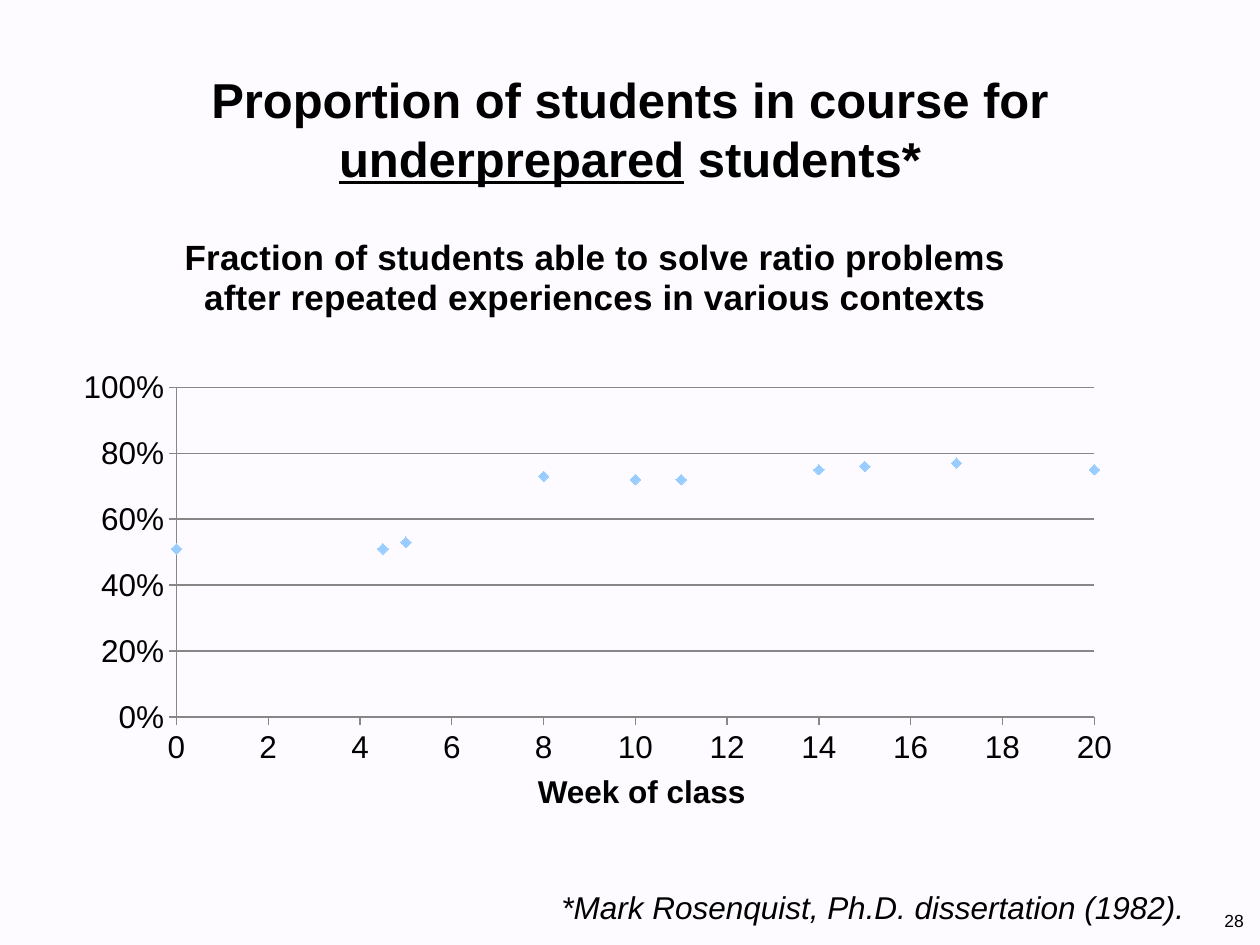
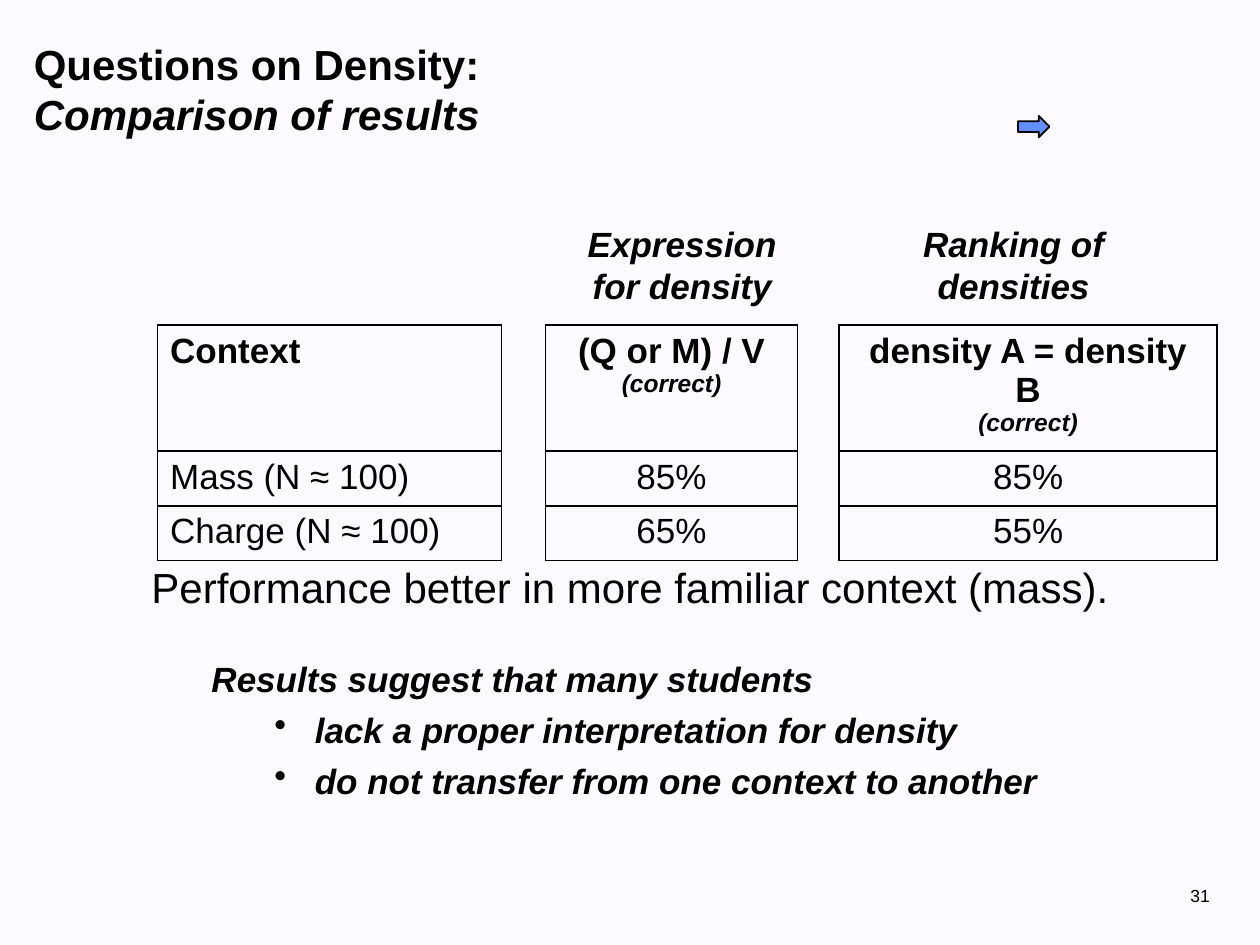
import lxml.etree
import pptx
import pptx.chart.data
import pptx.dml.color
import pptx.enum.chart
import pptx.enum.shapes
import pptx.enum.text
import pptx.oxml
import pptx.oxml.ns
import pptx.util

Inches, Pt = pptx.util.Inches, pptx.util.Pt
qn = pptx.oxml.ns.qn
ALIGN = pptx.enum.text.PP_ALIGN
ANCHOR = pptx.enum.text.MSO_ANCHOR

FONT = "Arial"
COLORS = {"paper": "FDFBFF", "ink": "000000", "grid": "878787",
          "points": "99CCFF", "arrow": "618FFD"}

WEEKS = [0, 4.5, 5, 8, 10, 11, 14, 15, 17, 20]
FRACTIONS = [0.51, 0.51, 0.53, 0.73, 0.72, 0.72, 0.75, 0.76, 0.77, 0.75]

# An empty string marks a gap column between the blocks of the table
RESULTS = [
    ["Context", "", "(Q or M) / V\n(correct)", "", "density A = density B\n(correct)"],
    ["Mass (N ≈ 100)", "", "85%", "", "85%"],
    ["Charge (N ≈ 100)", "", "65%", "", "55%"],
]
COLUMN_WIDTHS = [2.73, 0.35, 2, 0.33, 3]
ROW_HEIGHTS = [0.94, 0.41, 0.41]


def color(name):
    return pptx.dml.color.RGBColor.from_string(COLORS[name])


def style_font(font, size, bold=False, italic=False):
    font.name, font.size = FONT, Pt(size)
    font.bold, font.italic = bold, italic
    font.color.rgb = color("ink")


def add_text(slide, box, lines, size, bold=False, italic=False,
             align=ALIGN.LEFT, anchor=ANCHOR.TOP, wrap=True):
    """Each line is a list of run texts; returns the paragraphs."""
    frame = slide.shapes.add_textbox(*map(Inches, box)).text_frame
    frame.word_wrap = wrap
    frame.vertical_anchor = anchor
    for index, runs in enumerate(lines):
        paragraph = frame.paragraphs[0] if index == 0 else frame.add_paragraph()
        paragraph.alignment = align
        for text in runs:
            run = paragraph.add_run()
            run.text = text
            style_font(run.font, size, bold, italic)
    return frame.paragraphs


def new_slide(deck):
    slide = deck.slides.add_slide(deck.slide_layouts[6])
    slide.background.fill.solid()
    slide.background.fill.fore_color.rgb = color("paper")
    return slide


def add_title(slide, box, lines, size, align):
    return add_text(slide, box, lines, size, bold=True, align=align,
                    anchor=ANCHOR.MIDDLE)


def add_page_number(slide, box, number):
    add_text(slide, box, [[number]], 10, align=ALIGN.RIGHT,
             anchor=ANCHOR.BOTTOM, wrap=False)


def set_layout(element, **fractions):
    """Pin a chart part to fractions (x, y, w, h) of the chart area."""
    for old in element.findall(qn("c:layout")):
        element.remove(old)
    layout = lxml.etree.Element(qn("c:layout"))
    manual = lxml.etree.SubElement(layout, qn("c:manualLayout"))
    settings = {"xMode": "edge", "yMode": "edge", **fractions}
    if "w" in fractions:
        settings = {"layoutTarget": "inner", **settings}
    for tag, value in settings.items():
        lxml.etree.SubElement(manual, qn("c:" + tag)).set("val", str(value))
    text = element.find(qn("c:tx"))
    if text is None:
        element.insert(0, layout)
    else:
        text.addnext(layout)


def style_axis(axis, maximum, step, number_format):
    axis.minimum_scale, axis.maximum_scale = 0, maximum
    axis.major_unit = step
    axis.major_tick_mark = pptx.enum.chart.XL_TICK_MARK.OUTSIDE
    axis.minor_tick_mark = pptx.enum.chart.XL_TICK_MARK.NONE
    axis.tick_labels.number_format = number_format
    axis.tick_labels.number_format_is_linked = False
    style_font(axis.tick_labels.font, 18)
    axis.format.line.color.rgb = color("grid")
    axis.format.line.width = Pt(0.75)


def add_ratio_chart(slide, box):
    data = pptx.chart.data.XyChartData()
    points = data.add_series("Series 1")
    for week, fraction in zip(WEEKS, FRACTIONS):
        points.add_data_point(week, fraction)
    chart = slide.shapes.add_chart(
        pptx.enum.chart.XL_CHART_TYPE.XY_SCATTER, *map(Inches, box), data).chart
    style_font(chart.font, 18)
    chart.has_legend = False

    # Chart title
    chart.has_title = True
    heading = chart.chart_title.text_frame
    heading.text = ("Fraction of students able to solve ratio problems\n"
                    "after repeated experiences in various contexts")
    for paragraph in heading.paragraphs:
        style_font(paragraph.runs[0].font, 20, bold=True)
    set_layout(chart.chart_title._element, x=0.11, y=0.04)

    # Axes and plot area
    style_axis(chart.category_axis, 20, 2, "General")
    style_axis(chart.value_axis, 1, 0.2, "0%")
    chart.category_axis.has_major_gridlines = False
    chart.value_axis.has_major_gridlines = True
    gridlines = chart.value_axis.major_gridlines.format.line
    gridlines.color.rgb = color("grid")
    gridlines.width = Pt(0.75)
    set_layout(chart._chartSpace.chart.plotArea, x=0.106, y=0.312, w=0.857, h=0.582)

    # Points without a joining line
    plot = chart.plots[0]
    plot.vary_by_categories = False
    series = plot.series[0]
    series.smooth = False
    series.format.line.fill.background()
    series.marker.style = pptx.enum.chart.XL_MARKER_STYLE.DIAMOND
    series.marker.size = 6
    series.marker.format.fill.solid()
    series.marker.format.fill.fore_color.rgb = color("points")
    series.marker.format.line.color.rgb = color("points")


def set_cell_borders(cell, is_gap):
    properties = cell._tc.get_or_add_tcPr()
    for index, side in enumerate(("lnL", "lnR", "lnT", "lnB")):
        line = lxml.etree.Element(qn("a:" + side), w=str(Pt(1)))
        if is_gap and side in ("lnT", "lnB"):
            lxml.etree.SubElement(line, qn("a:noFill"))
        else:
            fill = lxml.etree.SubElement(line, qn("a:solidFill"))
            lxml.etree.SubElement(fill, qn("a:srgbClr")).set("val", COLORS["ink"])
        properties.insert(index, line)


def add_results_table(slide, box):
    table = slide.shapes.add_table(
        len(RESULTS), len(COLUMN_WIDTHS), *map(Inches, box)).table
    table.first_row = table.horz_banding = False
    for column, width in zip(table.columns, COLUMN_WIDTHS):
        column.width = Inches(width)
    for row, height in zip(table.rows, ROW_HEIGHTS):
        row.height = Inches(height)

    for r, texts in enumerate(RESULTS):
        for c, text in enumerate(texts):
            cell = table.cell(r, c)
            cell.text_frame.text = text
            cell.fill.background()
            set_cell_borders(cell, is_gap=not text)
            for paragraph in cell.text_frame.paragraphs:
                paragraph.alignment = ALIGN.CENTER if c else ALIGN.LEFT
                is_note = paragraph.text == "(correct)"
                for run in paragraph.runs:
                    style_font(run.font, 14 if is_note else 20,
                               bold=r == 0, italic=is_note)


def add_column_headings(slide, box):
    left, top, width, height = box
    for offset, share, heading in ((0, 1.83, "Expression for density"),
                                   (2.67, width - 2.67, "Ranking of densities")):
        add_text(slide, (left + offset, top, share, height), [[heading]], 20,
                 bold=True, italic=True, align=ALIGN.CENTER)


def add_conclusions(slide, box):
    lines = [["Results suggest that many students"],
             ["lack a proper interpretation for density"],
             ["do not transfer from one context to another"]]
    paragraphs = add_text(slide, box, lines, 20, bold=True, italic=True)
    for paragraph in paragraphs[1:]:
        paragraph.space_before = Pt(5)
        properties = paragraph._p.get_or_add_pPr()
        properties.set("marL", str(Inches(0.82)))
        properties.set("indent", str(Inches(-0.32)))
        lxml.etree.SubElement(properties, qn("a:buChar")).set("char", "•")


def add_arrow(slide, box):
    arrow = slide.shapes.add_shape(
        pptx.enum.shapes.MSO_SHAPE.RIGHT_ARROW, *map(Inches, box))
    arrow.shadow.inherit = False
    arrow.fill.solid()
    arrow.fill.fore_color.rgb = color("arrow")
    arrow.line.color.rgb = color("ink")
    arrow.line.width = Pt(1)


def build_proportion_slide(deck):
    slide = new_slide(deck)
    title = add_title(slide, (0.75, 0.5, 8.5, 1.04),
                      [["Proportion of students in course for ",
                        "underprepared", " students*"]], 28, ALIGN.CENTER)
    title[0].runs[1].font.underline = True
    add_ratio_chart(slide, (0.5, 1.67, 8.5, 4.5))
    add_text(slide, (4.17, 6.08, 1.87, 0.4), [["Week of class"]], 18,
             bold=True, wrap=False)
    add_text(slide, (4.08, 7, 5.42, 0.4),
             [["*Mark Rosenquist, Ph.D. dissertation (1982)."]], 18,
             italic=True, align=ALIGN.RIGHT)
    add_page_number(slide, (9.6, 7.17, 0.37, 0.27), "28")


def build_density_slide(deck):
    slide = new_slide(deck)
    title = add_title(slide, (0.17, 0.25, 8.58, 0.91),
                      [["Questions on Density:"], ["Comparison of results"]],
                      24, ALIGN.LEFT)
    title[1].runs[0].font.italic = True
    add_arrow(slide, (8.08, 0.92, 0.25, 0.17))
    add_column_headings(slide, (4.5, 1.72, 4.42, 0.77))
    add_results_table(slide, (1.25, 2.58, sum(COLUMN_WIDTHS), sum(ROW_HEIGHTS)))
    add_text(slide, (0.75, 4.41, 8.5, 0.5),
             [["Performance better in more familiar context (mass)."]], 24,
             align=ALIGN.CENTER)
    add_conclusions(slide, (1.58, 5.17, 7.42, 1.24))
    add_page_number(slide, (9.34, 6.97, 0.36, 0.27), "31")


def main():
    deck = pptx.Presentation()
    deck.slide_width, deck.slide_height = Inches(10), Inches(7.5)
    build_proportion_slide(deck)
    build_density_slide(deck)
    deck.save("out.pptx")


if __name__ == "__main__":
    main()
